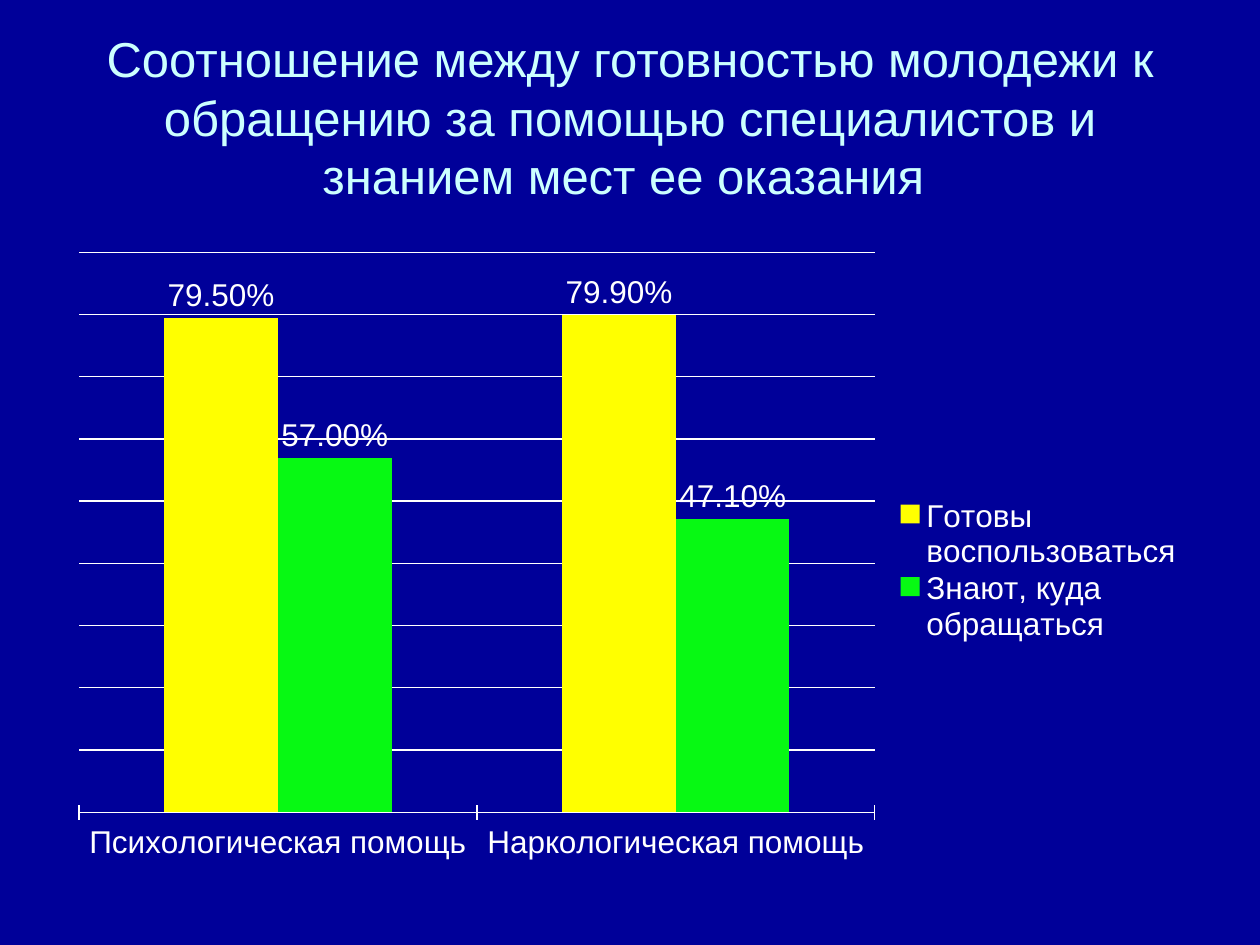
from dataclasses import dataclass

from lxml import etree
from pptx import Presentation
from pptx.chart.data import CategoryChartData
from pptx.dml.color import RGBColor
from pptx.enum.chart import XL_CHART_TYPE, XL_LABEL_POSITION, XL_LEGEND_POSITION, XL_TICK_MARK
from pptx.enum.text import MSO_ANCHOR, PP_ALIGN
from pptx.oxml.ns import qn
from pptx.util import Inches, Pt

COLUMNS = XL_CHART_TYPE.COLUMN_CLUSTERED
ABOVE = XL_LABEL_POSITION.OUTSIDE_END
RIGHT = XL_LEGEND_POSITION.RIGHT
CROSS = XL_TICK_MARK.CROSS
MIDDLE = MSO_ANCHOR.MIDDLE
CENTER = PP_ALIGN.CENTER


@dataclass(frozen=True)
class Theme:
    back: RGBColor = RGBColor(0x00, 0x00, 0x99)
    title: RGBColor = RGBColor(0xCC, 0xFF, 0xFF)
    text: RGBColor = RGBColor(0xFF, 0xFF, 0xFF)
    ready: RGBColor = RGBColor(0xFF, 0xFF, 0x00)
    aware: RGBColor = RGBColor(0x07, 0xF9, 0x13)
    face: str = "Arial"
    head: Pt = Pt(28)
    label: Pt = Pt(18)
    line: Pt = Pt(0.75)


@dataclass(frozen=True)
class Group:
    name: str
    shares: tuple[float, ...]
    color: RGBColor


THEME = Theme()
PERCENT = "0.00%"
TITLE = ("Соотношение между готовностью молодежи к обращению "
         "за помощью специалистов и знанием мест ее оказания ")
KINDS = ("Психологическая помощь", "Наркологическая помощь")
GROUPS = (
    Group("Готовы воспользоваться", (0.795, 0.799), THEME.ready),
    Group("Знают, куда обращаться", (0.57, 0.471), THEME.aware),
)


def style(font, size, color: RGBColor) -> None:
    font.name = THEME.face
    font.size = size
    font.color.rgb = color


def place(part, box: tuple[float, ...], inner: bool = False) -> None:
    """Set the place of a chart part as fractions of the chart."""
    layout = part.find(qn("c:layout"))
    if layout is None:
        layout = etree.Element(qn("c:layout"))
        before = part.find(qn("c:legendPos"))
        if before is None:
            part.insert(0, layout)
        else:
            before.addnext(layout)
    manual = etree.SubElement(layout, qn("c:manualLayout"))
    rules = [("layoutTarget", "inner")] if inner else []
    rules += [("xMode", "edge"), ("yMode", "edge")]
    rules += zip("xywh", map(str, box))
    for tag, value in rules:
        etree.SubElement(manual, qn(f"c:{tag}")).set("val", value)


def add_title(slide) -> None:
    title = slide.shapes.title
    title.left, title.top = Inches(0.5), Inches(0.3)
    title.width, title.height = Inches(9), Inches(1.25)
    frame = title.text_frame
    frame.text = TITLE
    frame.word_wrap = True
    frame.vertical_anchor = MIDDLE
    para = frame.paragraphs[0]
    para.alignment = CENTER
    style(para.runs[0].font, THEME.head, THEME.title)


def paint(series, group: Group) -> None:
    series.format.fill.solid()
    series.format.fill.fore_color.rgb = group.color
    series.invert_if_negative = False
    labels = series.data_labels
    labels.show_value = True
    labels.number_format = PERCENT
    labels.number_format_is_linked = False
    labels.position = ABOVE
    style(labels.font, THEME.label, THEME.text)


def add_chart(slide) -> None:
    data = CategoryChartData(number_format=PERCENT)
    data.categories = KINDS
    for group in GROUPS:
        data.add_series(group.name, group.shares)
    chart = slide.shapes.add_chart(
        COLUMNS, Inches(0.5), Inches(1.87), Inches(9), Inches(5.31), data).chart
    chart.has_title = False
    style(chart.font, THEME.label, THEME.text)

    # Columns
    plot = chart.plots[0]
    plot.vary_by_categories = False
    plot.gap_width, plot.overlap = 150, 0
    for series, group in zip(plot.series, GROUPS):
        paint(series, group)

    # Axes and grid
    scale, base = chart.value_axis, chart.category_axis
    scale.minimum_scale, scale.maximum_scale = 0, 0.9
    scale.major_unit = 0.1
    scale.has_major_gridlines = True
    scale.tick_labels.number_format = PERCENT
    scale.tick_labels.number_format_is_linked = False
    scale.visible = False
    base.major_tick_mark = CROSS
    for item in (scale.major_gridlines, base):
        item.format.line.color.rgb = THEME.text
        item.format.line.width = THEME.line

    # Legend and layout
    chart.has_legend = True
    legend = chart.legend
    legend.position = RIGHT
    legend.include_in_layout = False
    style(legend.font, THEME.label, THEME.text)
    area = next(chart.element.iter(qn("c:plotArea")))
    place(area, (0.014, 0.025, 0.702, 0.837), inner=True)
    place(next(chart.element.iter(qn("c:legend"))), (0.73, 0.39, 0.26, 0.22))


def main() -> None:
    deck = Presentation()
    deck.slide_width, deck.slide_height = Inches(10), Inches(7.5)
    slide = deck.slides.add_slide(deck.slide_layouts[5])
    slide.background.fill.solid()
    slide.background.fill.fore_color.rgb = THEME.back
    add_title(slide)
    add_chart(slide)
    deck.save("out.pptx")


if __name__ == "__main__":
    main()
